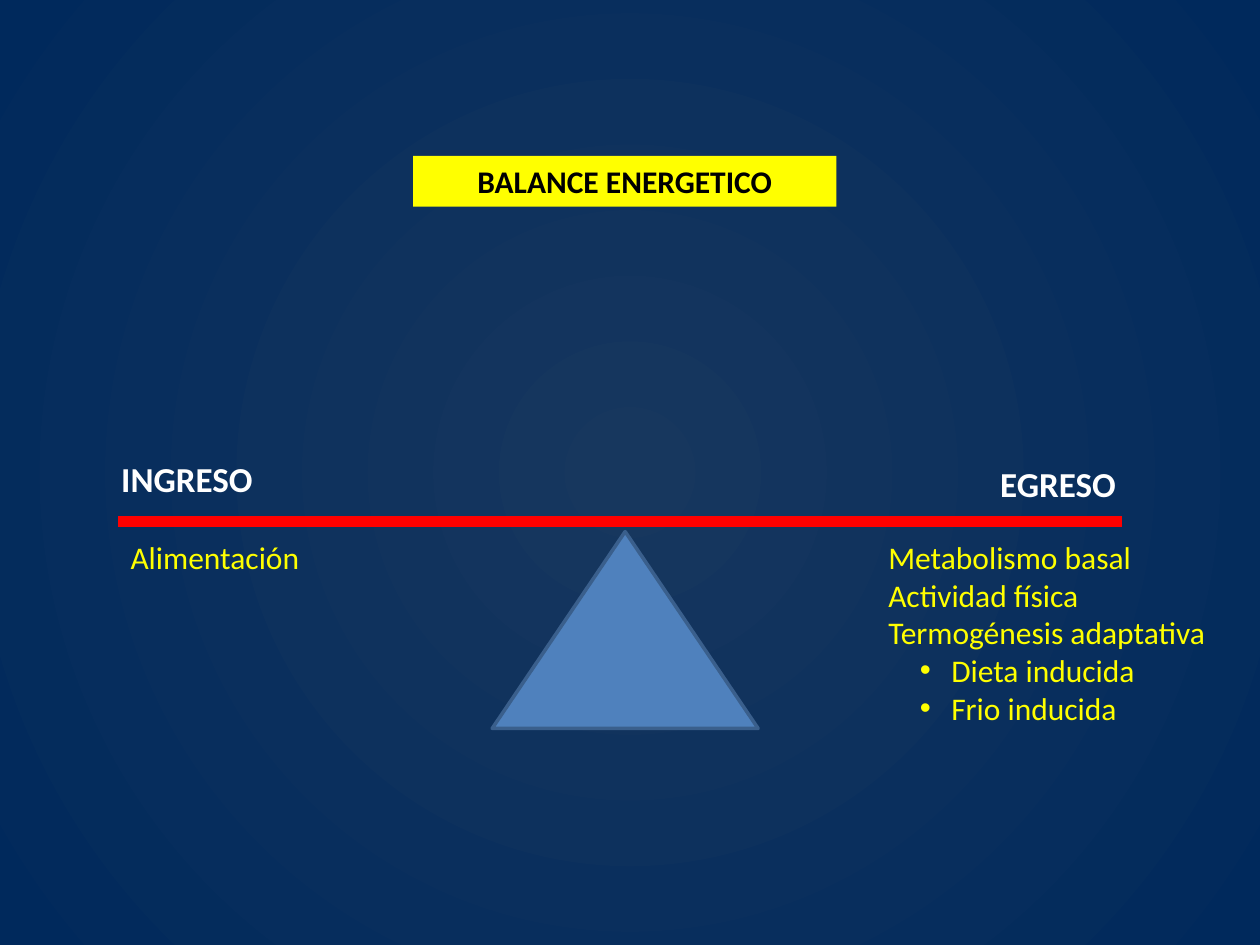
"""Build the energy balance slide: a beam on a fulcrum with intake and expenditure."""
from lxml.etree import SubElement
from pptx import Presentation
from pptx.dml.color import RGBColor
from pptx.enum.shapes import MSO_CONNECTOR, MSO_SHAPE
from pptx.enum.text import MSO_ANCHOR, PP_ALIGN
from pptx.oxml import parse_xml
from pptx.oxml.ns import nsdecls, qn
from pptx.util import Pt

YELLOW = RGBColor(0xFF, 0xFF, 0x00)
BLACK = RGBColor(0x00, 0x00, 0x00)
WHITE = RGBColor(0xFF, 0xFF, 0xFF)
RED = RGBColor(0xFF, 0x00, 0x00)
BLUE = RGBColor(0x4F, 0x81, 0xBD)
EDGE = RGBColor(0x3A, 0x5F, 0x8C)
CENTER = RGBColor(0x17, 0x37, 0x5E)
CORNER = RGBColor(0x00, 0x29, 0x5C)


def write(tf, text, size=18, color=YELLOW, bold=False, align=PP_ALIGN.LEFT, bullet=False):
    p = tf.paragraphs[0] if not tf.text else tf.add_paragraph()
    p.alignment = align
    r = p.add_run()
    r.text = text
    r.font.name = "Calibri"
    r.font.size = Pt(size)
    r.font.bold = bold
    r.font.color.rgb = color
    if bullet:
        p.level = 1
        pPr = p._p.get_or_add_pPr()
        pPr.set("marL", str(Pt(36)))
        pPr.set("indent", str(-Pt(18)))
        SubElement(pPr, qn("a:buFont")).set("typeface", "Arial")
        SubElement(pPr, qn("a:buChar")).set("char", "•")


prs = Presentation()
prs.slide_width, prs.slide_height = Pt(720), Pt(540)
s = prs.slides.add_slide(prs.slide_layouts[6])

s.background.fill.solid()
bg = s.element.find(".//" + qn("p:bgPr"))
bg.replace(bg[0], parse_xml(
    f'<a:gradFill {nsdecls("a")} rotWithShape="1"><a:gsLst>'
    f'<a:gs pos="0"><a:srgbClr val="{CENTER}"/></a:gs>'
    f'<a:gs pos="100000"><a:srgbClr val="{CORNER}"/></a:gs></a:gsLst>'
    '<a:path path="circle"><a:fillToRect l="50000" t="50000" r="50000" b="50000"/></a:path>'
    '</a:gradFill>'))

title = s.shapes.add_shape(MSO_SHAPE.RECTANGLE, Pt(236), Pt(89), Pt(242), Pt(29.1))
title.shadow.inherit = False
title.fill.solid()
title.fill.fore_color.rgb = YELLOW
title.line.fill.background()
title.text_frame.word_wrap = True
title.text_frame.vertical_anchor = MSO_ANCHOR.TOP
write(title.text_frame, "BALANCE ENERGETICO", color=BLACK, bold=True, align=PP_ALIGN.CENTER)

fulcrum = s.shapes.add_shape(MSO_SHAPE.ISOSCELES_TRIANGLE, Pt(281.25), Pt(303.75), Pt(152), Pt(112.5))
fulcrum.shadow.inherit = False
fulcrum.fill.solid()
fulcrum.fill.fore_color.rgb = BLUE
fulcrum.line.color.rgb = EDGE
fulcrum.line.width = Pt(2)

beam = s.shapes.add_connector(MSO_CONNECTOR.STRAIGHT, Pt(67.5), Pt(298), Pt(641.25), Pt(298))
beam.line.color.rgb = RED
beam.line.width = Pt(6)
SubElement(beam._element.spPr, qn("a:effectLst"))

heading = dict(size=20, color=WHITE, bold=True, align=PP_ALIGN.CENTER)
labels = [
    (45, 258, 123.75, 31.5, ["INGRESO"], heading),
    (528.75, 260.75, 151.75, 31.5, ["EGRESO"], heading),
    (67.5, 303.75, 112.5, 29.1, ["Alimentación"], {}),
    (500.5, 303.75, 202.5, 116.6,
     ["Metabolismo basal", "Actividad física", "Termogénesis adaptativa"], {}),
]
for x, y, w, h, lines, style in labels:
    tf = s.shapes.add_textbox(Pt(x), Pt(y), Pt(w), Pt(h)).text_frame
    tf.word_wrap = True
    for line in lines:
        write(tf, line, **style)

for line in ("Dieta inducida", "Frio inducida"):
    write(tf, line, bullet=True)

prs.save("out.pptx")
